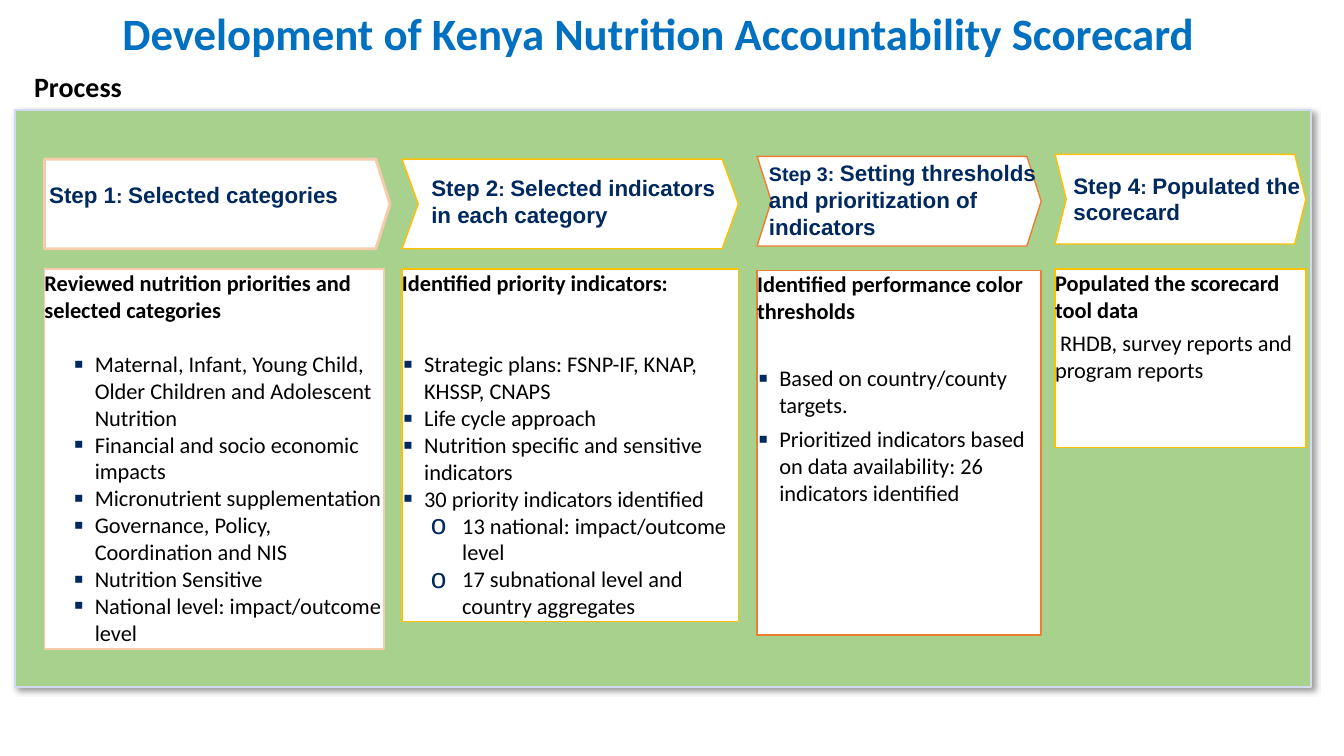
from dataclasses import dataclass

from lxml.etree import SubElement
from pptx import Presentation
from pptx.dml.color import RGBColor
from pptx.enum.shapes import MSO_SHAPE
from pptx.enum.text import MSO_ANCHOR, MSO_AUTO_SIZE, PP_ALIGN
from pptx.oxml.ns import qn
from pptx.util import Cm, Pt


@dataclass(frozen=True)
class Theme:
    """Colours, fonts and type sizes of the slide."""
    title: str = "0070C0"
    ink: str = "000000"
    navy: str = "002960"
    white: str = "FFFFFF"
    panel: str = "A9D18E"
    panel_line: str = "D3DAEF"
    peach: str = "F8CBAD"
    gold: str = "FFC000"
    orange: str = "ED7D31"
    body_font: str = "Calibri"
    step_font: str = "Arial"
    title_size: int = 32
    heading_size: int = 20
    text_size: int = 16
    small_size: int = 14


@dataclass(frozen=True)
class Step:
    """One column: arrow, label and box, with lengths in centimetres."""
    left: float
    width: float
    arrow_top: float
    arrow_width: float
    point: float
    notch: float
    label_box: tuple
    label: tuple
    box_top: float
    box_height: float
    line: str
    arrow_line: float
    heading: str
    items: tuple
    gap: float = 0
    spacing: float = 0


T = Theme()
ARROW_HEIGHT = 2.26
BULLETS = {
    "wide": (1, "▪", 1.27, 0.53),
    "square": (0, "▪", 0.56, 0.53),
    "ring": (1, "o", 1.52, 0.79),
}

STEPS = (
    Step(1.12, 8.56, 4.01, 8.71, 0.36, 0, (1.24, 4.57, 8.18, 0.69),
         (("Step 1", T.text_size), (": ", T.small_size),
          ("Selected categories", T.text_size)),
         6.78, 9.58, T.peach, 2,
         "Reviewed nutrition priorities and selected categories",
         (("wide", "Maternal, Infant, Young Child, Older Children and Adolescent Nutrition"),
          ("wide", "Financial and socio economic impacts"),
          ("wide", "Micronutrient supplementation"),
          ("wide", "Governance, Policy, Coordination and NIS"),
          ("wide", "Nutrition Sensitive"),
          ("wide", "National level: impact/outcome level")), gap=19.5),
    Step(10.13, 8.48, 4.01, 8.48, 0.41, 0.41, (10.87, 4.39, 7.21, 1.37),
         (("Step 2", T.text_size), (": ", T.small_size),
          ("Selected indicators in each category", T.text_size)),
         6.78, 8.89, T.gold, 1,
         "Identified priority indicators:",
         (("square", "Strategic plans: FSNP-IF, KNAP, KHSSP, CNAPS"),
          ("square", "Life cycle approach"),
          ("square", "Nutrition specific and sensitive indicators"),
          ("square", "30 priority indicators identified"),
          ("ring", "13 national: impact/outcome level"),
          ("ring", "17 subnational level and country aggregates")), gap=39),
    Step(19.08, 7.16, 3.94, 7.16, 0.36, 0.36, (19.38, 3.99, 6.88, 2.06),
         (("Step 3: ", T.small_size),
          ("Setting thresholds and prioritization of indicators", T.text_size)),
         6.81, 9.19, T.orange, 1,
         "Identified performance color thresholds",
         (("square", "Based on country/county targets."),
          ("square", "Prioritized indicators based on data availability: "
                     "26 indicators identified")), gap=29, spacing=4.8),
    Step(26.59, 6.32, 3.89, 6.32, 0.28, 0.28, (27.05, 4.32, 5.74, 1.37),
         (("Step 4", T.text_size), (": ", T.small_size),
          ("Populated the scorecard", T.text_size)),
         6.78, 4.5, T.gold, 1,
         "Populated the scorecard tool data",
         ((None, " RHDB, survey reports and program reports"),), gap=4.8),
)


def rgb(value):
    """Turn a hex string into a colour."""
    return RGBColor.from_string(value)


def add_run(p, text, size, color, font=T.body_font, bold=True):
    """Add one formatted run to a paragraph."""
    r = p.add_run()
    r.text = text
    r.font.size = Pt(size)
    r.font.name = font
    r.font.bold = bold
    r.font.color.rgb = rgb(color)


def frame(sp, anchor=MSO_ANCHOR.TOP, inset=None):
    """Prepare a wrapping text frame and return it."""
    tf = sp.text_frame
    tf.word_wrap = True
    tf.auto_size = MSO_AUTO_SIZE.NONE
    tf.vertical_anchor = anchor
    if inset is not None:
        tf.margin_left = tf.margin_right = tf.margin_top = tf.margin_bottom = Cm(inset)
    return tf


def paint(sp, fill, line, width):
    """Fill and outline a shape without a shadow."""
    sp.shadow.inherit = False
    sp.fill.solid()
    sp.fill.fore_color.rgb = rgb(fill)
    sp.line.color.rgb = rgb(line)
    sp.line.width = Pt(width)


def add_box(s, box, fill, line, width):
    """Add a painted rectangle."""
    sp = s.shapes.add_shape(MSO_SHAPE.RECTANGLE, *map(Cm, box))
    paint(sp, fill, line, width)
    return sp


def set_bullet(p, kind):
    """Give a paragraph its bullet and hanging indent."""
    p.level, char, margin, hang = BULLETS[kind]
    pPr = p._p.get_or_add_pPr()
    pPr.set("marL", str(Cm(margin)))
    pPr.set("indent", str(-Cm(hang)))
    SubElement(SubElement(pPr, qn("a:buClr")), qn("a:srgbClr"), val=T.navy)
    SubElement(pPr, qn("a:buSzPct"), val="125000")
    SubElement(pPr, qn("a:buFont"), typeface=T.step_font)
    SubElement(pPr, qn("a:buChar"), char=char)


def add_heading(sp, text, size, color, align):
    """Write a one-line heading in a shape."""
    p = frame(sp).paragraphs[0]
    p.alignment = align
    p.line_spacing = 0.9
    add_run(p, text, size, color)


def add_panel(s):
    """Add the green panel with its soft shadow."""
    sp = add_box(s, (0.38, 2.77, 32.66, 14.55), T.panel, T.panel_line, 1.5)
    effects = sp._element.spPr.find(qn("a:effectLst"))
    shadow = SubElement(effects, qn("a:outerShdw"), blurRad=str(Pt(4)),
                        dist=str(Pt(3)), dir="2700000", algn="tl", rotWithShape="0")
    color = SubElement(shadow, qn("a:srgbClr"), val=T.ink)
    SubElement(color, qn("a:alpha"), val="40000")


def add_arrow(s, step):
    """Add the arrow outline and the label of a step."""
    x, y = step.left, step.arrow_top
    right, middle, bottom = x + step.arrow_width, y + ARROW_HEIGHT / 2, y + ARROW_HEIGHT
    points = ((right - step.point, y), (right, middle), (right - step.point, bottom),
              (x, bottom), (x + step.notch, middle))
    builder = s.shapes.build_freeform(Cm(x), Cm(y))
    builder.add_line_segments([(Cm(a), Cm(b)) for a, b in points], close=True)
    paint(builder.convert_to_shape(), T.white, step.line, step.arrow_line)
    label = s.shapes.add_textbox(*map(Cm, step.label_box))
    p = frame(label, MSO_ANCHOR.MIDDLE, 0).paragraphs[0]
    for text, size in step.label:
        add_run(p, text, size, T.navy, T.step_font)


def add_details(s, step):
    """Add the box with the heading and items of a step."""
    box = (step.left, step.box_top, step.width, step.box_height)
    tf = frame(add_box(s, box, T.white, step.line, 1), inset=0)
    p = tf.paragraphs[0]
    p.alignment = PP_ALIGN.LEFT
    add_run(p, step.heading, T.text_size, T.ink)
    for i, (kind, text) in enumerate(step.items):
        p = tf.add_paragraph()
        p.alignment = PP_ALIGN.LEFT
        p.space_before = Pt(step.spacing if i else step.gap)
        if kind:
            set_bullet(p, kind)
        add_run(p, text, T.text_size, T.ink, bold=False)


def main():
    """Build the slide and save it."""
    prs = Presentation()
    prs.slide_width, prs.slide_height = Cm(33.87), Cm(19.05)
    s = prs.slides.add_slide(prs.slide_layouts[5])
    title = s.shapes.title
    title.left, title.top, title.width, title.height = map(Cm, (0.38, 0.18, 32.44, 1.19))
    add_heading(title, "Development of Kenya Nutrition Accountability Scorecard",
                T.title_size, T.title, PP_ALIGN.CENTER)
    process = s.shapes.add_textbox(*map(Cm, (0.61, 1.73, 25.22, 1.12)))
    add_heading(process, "Process", T.heading_size, T.ink, PP_ALIGN.LEFT)
    add_panel(s)
    for step in STEPS:
        add_arrow(s, step)
        add_details(s, step)
    prs.save("out.pptx")


if __name__ == "__main__":
    main()
